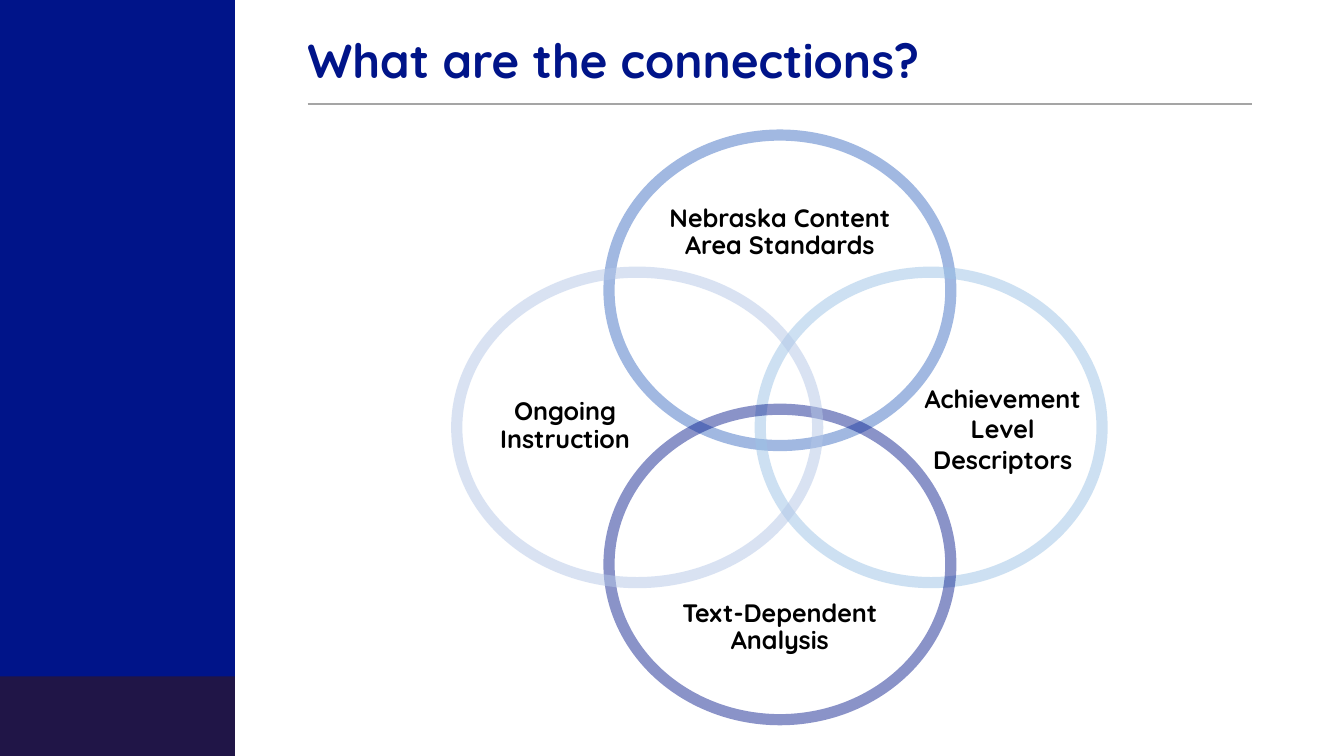
from lxml import etree
from pptx import Presentation
from pptx.dml.color import RGBColor
from pptx.enum.shapes import MSO_CONNECTOR, MSO_SHAPE
from pptx.enum.text import MSO_ANCHOR, PP_ALIGN
from pptx.oxml.ns import qn
from pptx.util import Inches, Pt


def color(value):
    return RGBColor.from_string(value)


def add_text(box, paragraphs, size, text_color, align, line_spacing, side_inset):
    left, top, width, height = box
    textbox = slide.shapes.add_textbox(
        Inches(left), Inches(top), Inches(width), Inches(height))
    frame = textbox.text_frame
    frame.word_wrap = True
    frame.vertical_anchor = MSO_ANCHOR.MIDDLE
    frame.margin_left = frame.margin_right = Inches(side_inset)
    for index, lines in enumerate(paragraphs):
        paragraph = frame.add_paragraph() if index else frame.paragraphs[0]
        paragraph.alignment = align
        paragraph.line_spacing = line_spacing
        for number, line in enumerate(lines):
            if number:
                paragraph.add_line_break()
            run = paragraph.add_run()
            run.text = line
            run.font.name = "Quicksand"
            run.font.size = Pt(size)
            run.font.bold = True
            run.font.color.rgb = color(text_color)


presentation = Presentation()
presentation.slide_width = Inches(13.33)
presentation.slide_height = Inches(7.5)
slide = presentation.slides.add_slide(presentation.slide_layouts[6])

# Sidebar with a darker foot
for top, height, fill in [(0, 7.5, "001489"), (6.71, 0.79, "201547")]:
    band = slide.shapes.add_shape(
        MSO_SHAPE.RECTANGLE, 0, Inches(top), Inches(2.33), Inches(height))
    band.shadow.inherit = False
    band.fill.solid()
    band.fill.fore_color.rgb = color(fill)
    band.line.fill.background()

# Title and rule
rule = slide.shapes.add_connector(
    MSO_CONNECTOR.STRAIGHT, Inches(3.05), Inches(1.03), Inches(12.42), Inches(1.03))
rule.line.color.rgb = color("A5A5A5")
rule.line.width = Pt(1)
etree.SubElement(rule._element.spPr, qn("a:effectLst"))
add_text((3.05, 0.36, 9.37, 0.53), [["What are the connections?"]],
         34, "001489", PP_ALIGN.LEFT, 0.9, 0)

# Overlapping rings: left, top, width, line colour, opacity in percent
rings = [
    (6.04, 1.34, 3.39, "4472C4", 50),
    (7.54, 2.7, 3.39, "9DC3E6", 50),
    (6.04, 4.06, 3.39, "001489", 45),
    (4.53, 2.7, 3.58, "B4C7E7", 50),
]
for left, top, width, line_color, opacity in rings:
    ring = slide.shapes.add_shape(
        MSO_SHAPE.OVAL, Inches(left), Inches(top), Inches(width), Inches(3.08))
    ring.shadow.inherit = False
    ring.fill.background()
    ring.line.color.rgb = color(line_color)
    ring.line.width = Pt(8)
    line_fill = ring.line._ln.find(qn("a:solidFill"))[0]
    etree.SubElement(line_fill, qn("a:alpha"), val=str(opacity * 1000))

# Ring labels: box, paragraphs made of lines, line spacing
labels = [
    ((6.4, 1.81, 2.67, 1), [["Nebraska Content Area Standards"]], 0.9),
    ((6.4, 5.73, 2.67, 1), [["Text-Dependent Analysis"]], 0.9),
    ((4.77, 3.73, 1.67, 1), [["Ongoing Instruction"]], 0.9),
    ((8.82, 3.75, 2.25, 1.01), [["Achievement", "Level"], ["Descriptors"]], 1.0),
]
for box, paragraphs, line_spacing in labels:
    add_text(box, paragraphs, 18, "000000", PP_ALIGN.CENTER, line_spacing, 0.1)

presentation.save("out.pptx")
